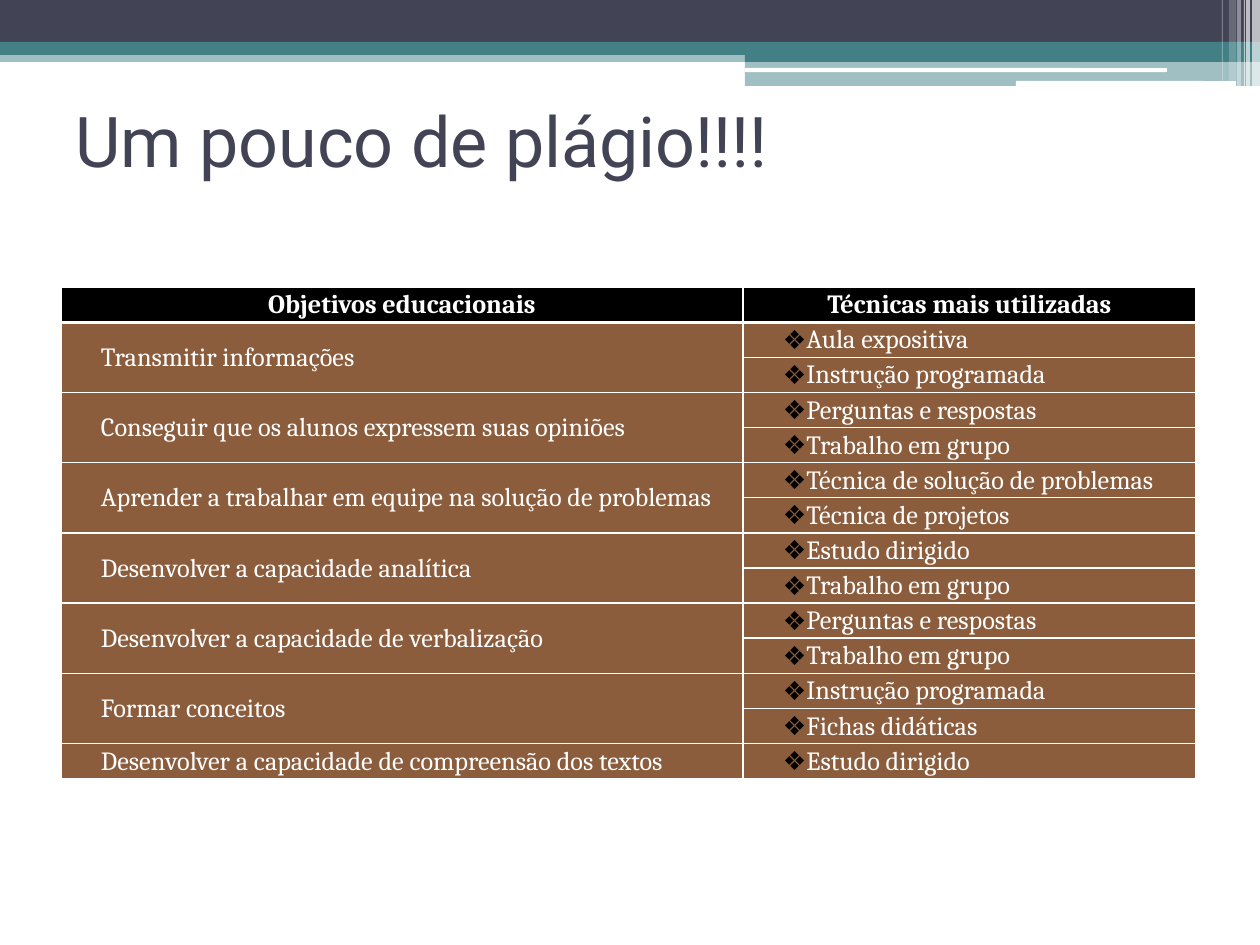
from lxml.etree import SubElement
from pptx import Presentation
from pptx.dml.color import RGBColor
from pptx.enum.shapes import MSO_SHAPE as SHAPE
from pptx.enum.text import MSO_ANCHOR as ANCHOR, PP_ALIGN as ALIGN
from pptx.oxml import parse_xml
from pptx.oxml.ns import nsdecls, qn
from pptx.util import Emu, Pt

EMU_PER_PX = 914400 / 126

WHITE = RGBColor(0xFF, 0xFF, 0xFF)
BLACK = RGBColor(0, 0, 0)
NAVY = RGBColor(0x42, 0x44, 0x56)
TEAL = RGBColor(0x43, 0x80, 0x86)
BROWN = RGBColor(0x8B, 0x5D, 0x3D)

# left, top, width, height, colour, opacity in percent
BANDS = [
    (0, 50, 1260, 12, TEAL, 50),
    (0, 0, 1260, 42, NAVY, 100),
    (0, 42, 1260, 13, TEAL, 100),
    (745, 49, 515, 13, TEAL, 100),
    (745, 61, 515, 25, TEAL, 50),
]
RULES = [
    (745, 68, 422, 4, WHITE, 100),
    (1016, 81, 220, 5, WHITE, 100),
]
# left, width, height, opacity in percent
STRIPES = [
    (1252, 8, 86, 65),
    (1246, 4, 86, 65),
    (1244, 1, 86, 60),
    (1237, 4, 86, 40),
    (1229, 7, 81, 20),
    (1222, 1, 81, 30),
]

HEADINGS = ("Objetivos educacionais", "Técnicas mais utilizadas")
GOALS = [
    ("Transmitir informações", ["Aula expositiva", "Instrução programada"]),
    ("Conseguir que os alunos expressem suas opiniões",
     ["Perguntas e respostas", "Trabalho em grupo"]),
    ("Aprender a trabalhar em equipe na solução de problemas",
     ["Técnica de solução de problemas", "Técnica de projetos"]),
    ("Desenvolver a capacidade analítica",
     ["Estudo dirigido", "Trabalho em grupo"]),
    ("Desenvolver a capacidade de verbalização",
     ["Perguntas e respostas", "Trabalho em grupo"]),
    ("Formar conceitos", ["Instrução programada", "Fichas didáticas"]),
    ("Desenvolver a capacidade de compreensão dos textos",
     ["Estudo dirigido"]),
]
COL_WIDTHS = (682, 453)
TABLE_HEIGHT = 492
BULLET_FONT = "DejaVu Sans"


def px(n):
    return Emu(round(n * EMU_PER_PX))


def box(*lengths):
    return [px(n) for n in lengths]


def write(tf, text, font="Cambria", size=15, color=WHITE, bold=False,
          align=ALIGN.LEFT, bullet=None):
    p = tf.paragraphs[0]
    p.alignment = align
    r = p.add_run()
    r.text = text
    r.font.name, r.font.size, r.font.bold = font, Pt(size), bold
    r.font.color.rgb = color
    if bullet:
        pPr = p._p.get_or_add_pPr()
        pPr.set("marL", "0")
        pPr.set("indent", "0")
        clr = SubElement(pPr, qn("a:buClr"))
        SubElement(clr, qn("a:srgbClr"), val=str(BLACK))
        SubElement(pPr, qn("a:buFont"), typeface=BULLET_FONT)
        SubElement(pPr, qn("a:buChar"), char=bullet)


def add_bar(s, left, top, width, height, color, opacity, kind=SHAPE.RECTANGLE):
    sp = s.shapes.add_shape(kind, *box(left, top, width, height))
    sp.shadow.inherit = False
    sp.fill.solid()
    sp.fill.fore_color.rgb = color
    sp.line.fill.background()
    if opacity < 100:
        clr = sp.fill._xPr.find(qn("a:solidFill"))[0]
        SubElement(clr, qn("a:alpha"), val=str(opacity * 1000))


def set_borders(cell, **widths):
    """Draw white borders; widths are points keyed by L, R, T and B."""
    tcPr = cell._tc.get_or_add_tcPr()
    for i, (side, width) in enumerate(widths.items()):
        tcPr.insert(i, parse_xml(
            f'<a:ln{side} {nsdecls("a")} w="{Pt(width)}"><a:solidFill>'
            f'<a:srgbClr val="{WHITE}"/></a:solidFill></a:ln{side}>'))


def format_cell(cell, fill, indent, top=1, bottom=1):
    cell.fill.solid()
    cell.fill.fore_color.rgb = fill
    cell.vertical_anchor = ANCHOR.MIDDLE
    cell.margin_left, cell.margin_top = px(indent), px(1)
    cell.margin_right, cell.margin_bottom = px(1), 0
    set_borders(cell, L=1, R=1, T=top, B=bottom)


def add_title(s, text):
    title = s.shapes.title
    title.left, title.top, title.width, title.height = box(63, 66, 1134, 147)
    title.text_frame.vertical_anchor = ANCHOR.MIDDLE
    write(title.text_frame, text, font="Roboto", size=40, color=NAVY)


def add_goals_table(s):
    n_rows = 1 + sum(len(techniques) for _, techniques in GOALS)
    table = s.shapes.add_table(
        n_rows, 2, *box(61, 287, sum(COL_WIDTHS), TABLE_HEIGHT)).table
    for col, width in zip(table.columns, COL_WIDTHS):
        col.width = px(width)
    for i, row in enumerate(table.rows):
        row.height = px(TABLE_HEIGHT / n_rows)
        for cell in row.cells:
            if i == 0:
                format_cell(cell, BLACK, 1, bottom=2)
            else:
                format_cell(cell, BROWN, 40, top=2 if i == 1 else 1)

    for c, heading in enumerate(HEADINGS):
        write(table.cell(0, c).text_frame, heading, bold=True,
              align=ALIGN.CENTER)
    first = 1
    for goal, techniques in GOALS:
        last = first + len(techniques) - 1
        if last > first:
            table.cell(first, 0).merge(table.cell(last, 0))
        write(table.cell(first, 0).text_frame, goal)
        for i, technique in enumerate(techniques, first):
            write(table.cell(i, 1).text_frame, technique, bullet="❖")
        first = last + 1


def main():
    prs = Presentation()
    prs.slide_width, prs.slide_height = box(1260, 945)
    s = prs.slides.add_slide(prs.slide_layouts[5])
    for band in BANDS:
        add_bar(s, *band)
    for rule in RULES:
        add_bar(s, *rule, kind=SHAPE.ROUNDED_RECTANGLE)
    for left, width, height, opacity in STRIPES:
        add_bar(s, left, 0, width, height, WHITE, opacity)
    add_title(s, "Um pouco de plágio!!!!")
    add_goals_table(s)
    prs.save("out.pptx")


if __name__ == "__main__":
    main()
